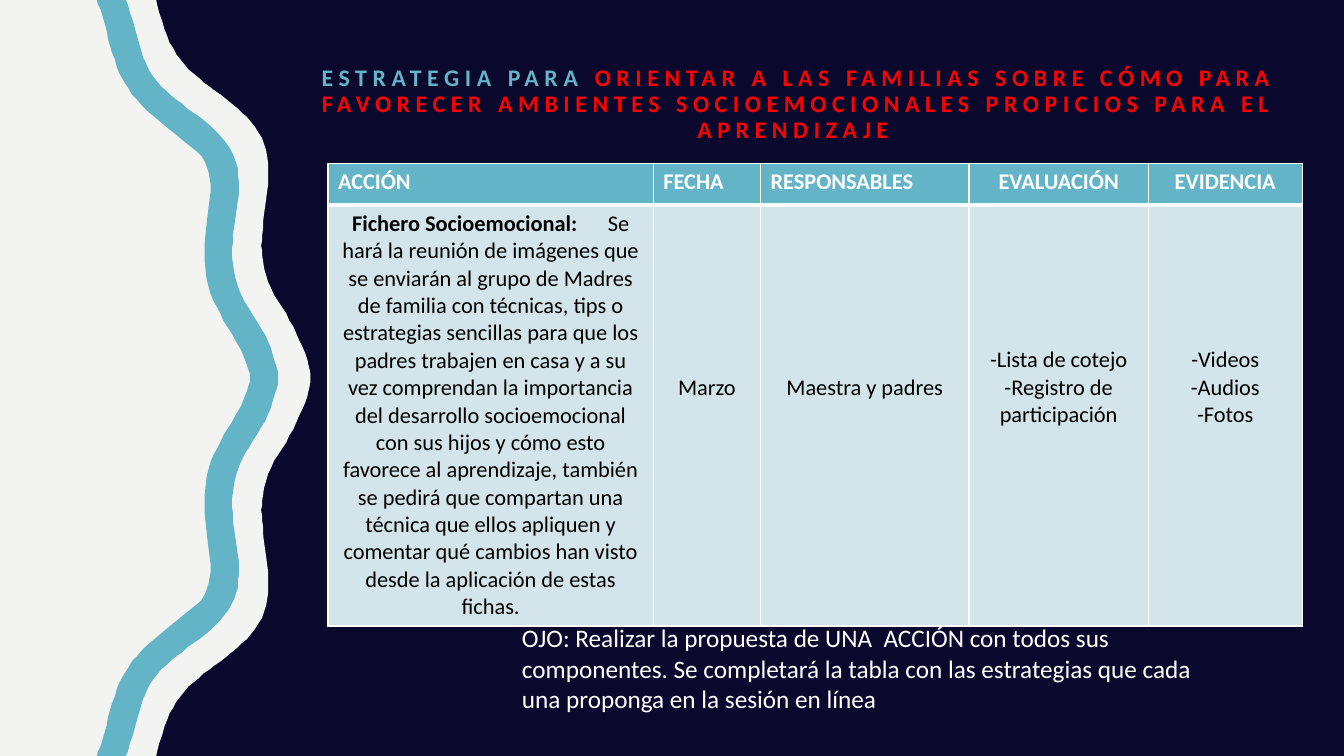
from dataclasses import dataclass

from pptx import Presentation
from pptx import util as u
from pptx.dml.color import RGBColor
from pptx.enum import text
from pptx.oxml.ns import qn
from lxml import etree


@dataclass(frozen=True)
class Theme:
    font: str = "Calibri"
    navy: str = "0B082E"
    paper: str = "F3F3F2"
    teal: str = "62B4C6"
    pale: str = "D3E5EA"
    white: str = "FFFFFF"
    black: str = "000000"
    red: str = "FF0000"
    head: int = 17
    cell: int = 16
    note: int = 18


T = Theme()
WIDE, HIGH = u.Inches(13.33), u.Inches(7.5)
MID = text.PP_ALIGN.CENTER
LEFT = text.PP_ALIGN.LEFT
LINE = 1.22  # line height as a multiple of the type size

# Upper halves of the wave edges, in a field of 308 by 750 units
FIELD = (308, 750)
SHORE = [(155, 0), (163, 29), (175, 54), (192, 73), (213, 90), (235, 107),
         (253, 126), (264, 149), (266, 176), (263, 205), (260, 234), (260, 253),
         (266, 280), (280, 305), (294, 331), (305, 357), (308, 375)]
OUTER = [(125, 0), (134, 29), (142, 57), (156, 81), (175, 99), (198, 116),
         (218, 134), (232, 155), (237, 180), (235, 206), (231, 234), (231, 261),
         (237, 287), (251, 313), (266, 339), (275, 366), (276, 375)]
INNER = [(96, 0), (104, 24), (111, 52), (123, 81), (141, 105), (164, 125),
         (186, 143), (203, 160), (209, 183), (206, 213), (203, 250), (207, 285),
         (219, 312), (233, 337), (243, 357), (248, 375)]

# Heading, share of width, heading alignment, lines above the text, paragraphs
COLS = [
    ("ACCIÓN", 0.334, LEFT, 0, None),
    ("FECHA", 0.11, LEFT, 6, ["Marzo"]),
    ("RESPONSABLES", 0.214, LEFT, 6, ["Maestra y padres"]),
    ("EVALUACIÓN", 0.184, MID, 5, ["-Lista de cotejo", "-Registro de participación"]),
    ("EVIDENCIA", 0.158, MID, 5, ["-Videos", "-Audios", "-Fotos"]),
]
ACTION = (
    "Se hará la reunión de imágenes que se enviarán al grupo de Madres de familia "
    "con técnicas, tips o estrategias sencillas para que los padres trabajen en casa "
    "y a su vez comprendan la importancia del desarrollo socioemocional con sus hijos "
    "y cómo esto favorece al aprendizaje, también se pedirá que compartan una técnica "
    "que ellos apliquen y comentar qué cambios han visto desde la aplicación de estas "
    "fichas.")
NOTE = (
    "OJO: Realizar la propuesta de UNA  ACCIÓN con todos sus componentes. Se completará "
    "la tabla con las estrategias que cada una proponga en la sesión en línea")


def area(left, top, wide, high):
    """Turn shares of the slide into lengths."""
    return (u.Emu(int(left * WIDE)), u.Emu(int(top * HIGH)),
            u.Emu(int(wide * WIDE)), u.Emu(int(high * HIGH)))


def write(para, words, size, color, bold=False, gap=0, align=None):
    """Add a run to a paragraph; gap is extra letter spacing in points."""
    run = para.add_run()
    run.text = words
    font = run.font
    font.name, font.size, font.bold = T.font, u.Pt(size), bold
    font.color.rgb = RGBColor.from_string(color)
    if gap:
        run._r.get_or_add_rPr().set("spc", str(gap * 100))
    if align is not None:
        para.alignment = align


def edge(half):
    """Mirror the half about the middle and smooth it (Catmull-Rom)."""
    knots = half + [(x, FIELD[1] - y) for x, y in half[-2::-1]]
    ends = knots[:1] + knots + knots[-1:]
    out = []
    for a, b, c, d in zip(ends, ends[1:], ends[2:], ends[3:]):
        for t in (0, 0.25, 0.5, 0.75):
            out.append(tuple(
                0.5 * (2 * q + (r - p) * t + (2 * p - 5 * q + 4 * r - s) * t ** 2
                       + (3 * q - p - 3 * r + s) * t ** 3)
                for p, q, r, s in zip(a, b, c, d)))
    return out + knots[-1:]


def waves(slide, box):
    left, top, wide, high = box
    scale = (wide / FIELD[0], high / FIELD[1])
    plain = [(0, 0), (0, FIELD[1])]
    bands = [(edge(SHORE), plain, T.paper), (edge(OUTER), edge(INNER), T.teal)]
    for right, back, color in bands:
        pen = slide.shapes.build_freeform(*right[0], scale=scale)
        pen.add_line_segments(right[1:] + back[::-1], close=True)
        band = pen.convert_to_shape(left, top)
        band.shadow.inherit = False
        band.fill.solid()
        band.fill.fore_color.rgb = RGBColor.from_string(color)
        band.line.fill.background()


def heading(slide, box):
    title = slide.shapes.title
    title.left, title.top, title.width, title.height = box
    frame = title.text_frame
    frame.word_wrap = True
    frame.auto_size = text.MSO_AUTO_SIZE.NONE
    frame.vertical_anchor = text.MSO_ANCHOR.TOP
    para = frame.paragraphs[0]
    para.line_spacing = 0.9
    style = dict(size=T.head, bold=True, gap=4, align=MID)
    write(para, "ESTRATEGIA PARA ", color=T.teal, **style)
    write(para, "ORIENTAR A LAS FAMILIAS SOBRE CÓMO PARA FAVORECER AMBIENTES "
          "SOCIOEMOCIONALES PROPICIOS PARA EL APRENDIZAJE ", color=T.red, **style)


def paint(cell, color, base):
    """Fill a cell and rule its sides; base is the weight of the bottom."""
    props = cell._tc.get_or_add_tcPr()
    for side, weight in (("L", 1), ("R", 1), ("T", 1), ("B", base)):
        rule = etree.SubElement(props, qn(f"a:ln{side}"), w=str(u.Pt(weight)))
        fill = etree.SubElement(rule, qn("a:solidFill"))
        etree.SubElement(fill, qn("a:srgbClr"), val=T.white)
    cell.fill.solid()
    cell.fill.fore_color.rgb = RGBColor.from_string(color)


def plan(slide, box):
    wide, high = box[2:]
    table = slide.shapes.add_table(2, len(COLS), *box).table
    table.rows[0].height = int(high * 0.09)
    table.rows[1].height = high - table.rows[0].height
    for i, (name, share, align, skip, lines) in enumerate(COLS):
        table.columns[i].width = int(wide * share)
        head, body = table.cell(0, i), table.cell(1, i)
        paint(head, T.teal, 3)
        paint(body, T.pale, 1)
        write(head.text_frame.paragraphs[0], name, T.cell, T.white, True, align=align)
        body.margin_top = u.Inches(0.05) + u.Pt(skip * T.cell * LINE)
        para = body.text_frame.paragraphs[0]
        if lines is None:
            write(para, "Fichero Socioemocional:", T.cell, T.black, True, align=MID)
            write(para, " ", T.cell, T.black, True, gap=18)
            write(para, ACTION, T.cell, T.black)
            continue
        for k, words in enumerate(lines):
            para = body.text_frame.add_paragraph() if k else para
            write(para, words, T.cell, T.black, align=MID)


def remark(slide, box):
    frame = slide.shapes.add_textbox(*box).text_frame
    frame.word_wrap = True
    write(frame.paragraphs[0], NOTE, T.note, T.white)


def main():
    deck = Presentation()
    deck.slide_width, deck.slide_height = WIDE, HIGH
    slide = deck.slides.add_slide(deck.slide_layouts[5])
    back = slide.background.fill
    back.solid()
    back.fore_color.rgb = RGBColor.from_string(T.navy)
    waves(slide, area(0, 0, 0.231, 1))
    heading(slide, area(0.219, 0.081, 0.75, 0.139))
    plan(slide, area(0.244, 0.216, 0.725, 0.612))
    remark(slide, area(0.381, 0.817, 0.514, 0.135))
    deck.save("out.pptx")


if __name__ == "__main__":
    main()
